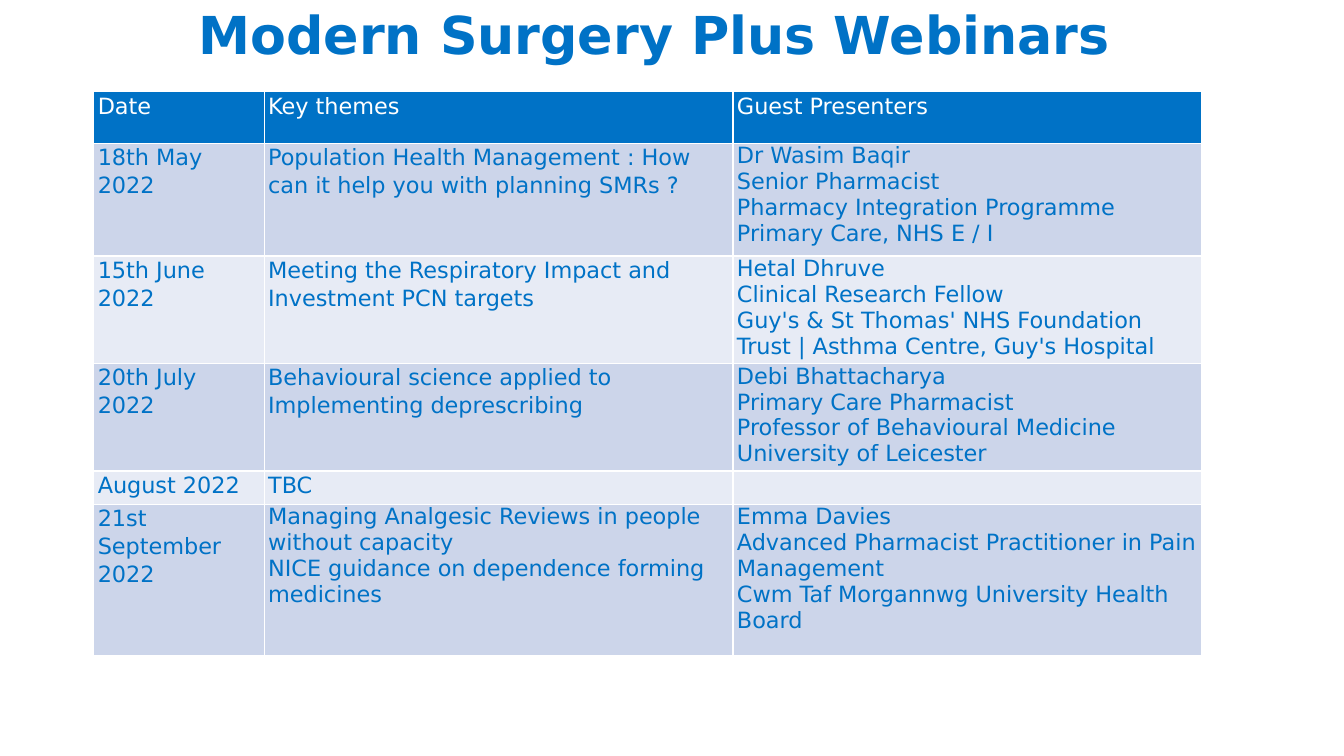
import pptx
import pptx.util
import pptx.dml.color
import pptx.enum.text
from pptx.util import Inches

FONT = "DejaVu Sans"
COLOURS = {
    "blue": "0072C6",
    "white": "FFFFFF",
    "band_dark": "CCD5EA",
    "band_light": "E7EBF5",
}


def rgb(name):
    return pptx.dml.color.RGBColor.from_string(COLOURS[name])


def style(paragraph, size, colour, bold, spacing):
    paragraph.line_spacing = spacing
    paragraph.font.name = FONT
    paragraph.font.size = pptx.util.Pt(size)
    paragraph.font.bold = bold
    paragraph.font.color.rgb = rgb(colour)


deck = pptx.Presentation()
deck.slide_width = Inches(13.33)
deck.slide_height = Inches(7.5)
slide = deck.slides.add_slide(deck.slide_layouts[6])

# Title
title = slide.shapes.add_textbox(Inches(0.93), 0, Inches(11.12), Inches(0.7)).text_frame
title.word_wrap = True
title.vertical_anchor = pptx.enum.text.MSO_ANCHOR.BOTTOM
title.text = "Modern Surgery Plus Webinars"
title.paragraphs[0].alignment = pptx.enum.text.PP_ALIGN.CENTER
style(title.paragraphs[0], 37.3, "blue", True, 0.9)

# Programme: row height, then date, themes and presenters, one line per paragraph
programme = [
    (0.51, "Date", "Key themes", "Guest Presenters"),
    (1.12, "18th May 2022",
     "Population Health Management : How can it help you with planning SMRs ?",
     "Dr Wasim Baqir\nSenior Pharmacist\nPharmacy Integration Programme\n"
     "Primary Care, NHS E / I"),
    (1.04, "15th June 2022",
     "Meeting the Respiratory Impact and Investment PCN targets",
     "Hetal Dhruve\nClinical Research Fellow\n"
     "Guy's & St Thomas' NHS Foundation Trust | Asthma Centre, Guy's Hospital"),
    (1.04, "20th July 2022",
     "Behavioural science applied to Implementing deprescribing",
     "Debi Bhattacharya\nPrimary Care Pharmacist\n"
     "Professor of Behavioural Medicine\nUniversity of Leicester"),
    (0.33, "August 2022", "TBC", ""),
    (1.5, "21st September 2022",
     "Managing Analgesic Reviews in people without capacity\n"
     "NICE guidance on dependence forming medicines",
     "Emma Davies\nAdvanced Pharmacist Practitioner in Pain Management\n"
     "Cwm Taf Morgannwg University Health Board"),
]
column_widths = [1.69, 4.65, 4.65]

# Table
schedule = slide.shapes.add_table(
    len(programme), len(column_widths),
    Inches(0.93), Inches(0.91), Inches(10.99), Inches(5.54)).table
for column, width in zip(schedule.columns, column_widths):
    column.width = Inches(width)

for row_index, (height, *entries) in enumerate(programme):
    schedule.rows[row_index].height = Inches(height)
    is_header = row_index == 0
    if is_header:
        band = "blue"
    else:
        band = "band_dark" if row_index % 2 else "band_light"
    for column_index, entry in enumerate(entries):
        cell = schedule.cell(row_index, column_index)
        cell.fill.solid()
        cell.fill.fore_color.rgb = rgb(band)
        cell.margin_left = cell.margin_right = Inches(0.04)
        cell.margin_top = cell.margin_bottom = 0
        cell.text = entry
        # Lists and presenter details are set tighter than single entries
        spacing = 1.0 if "\n" in entry else 1.07
        for paragraph in cell.text_frame.paragraphs:
            style(paragraph, 16, "white" if is_header else "blue", False, spacing)

deck.save("out.pptx")
